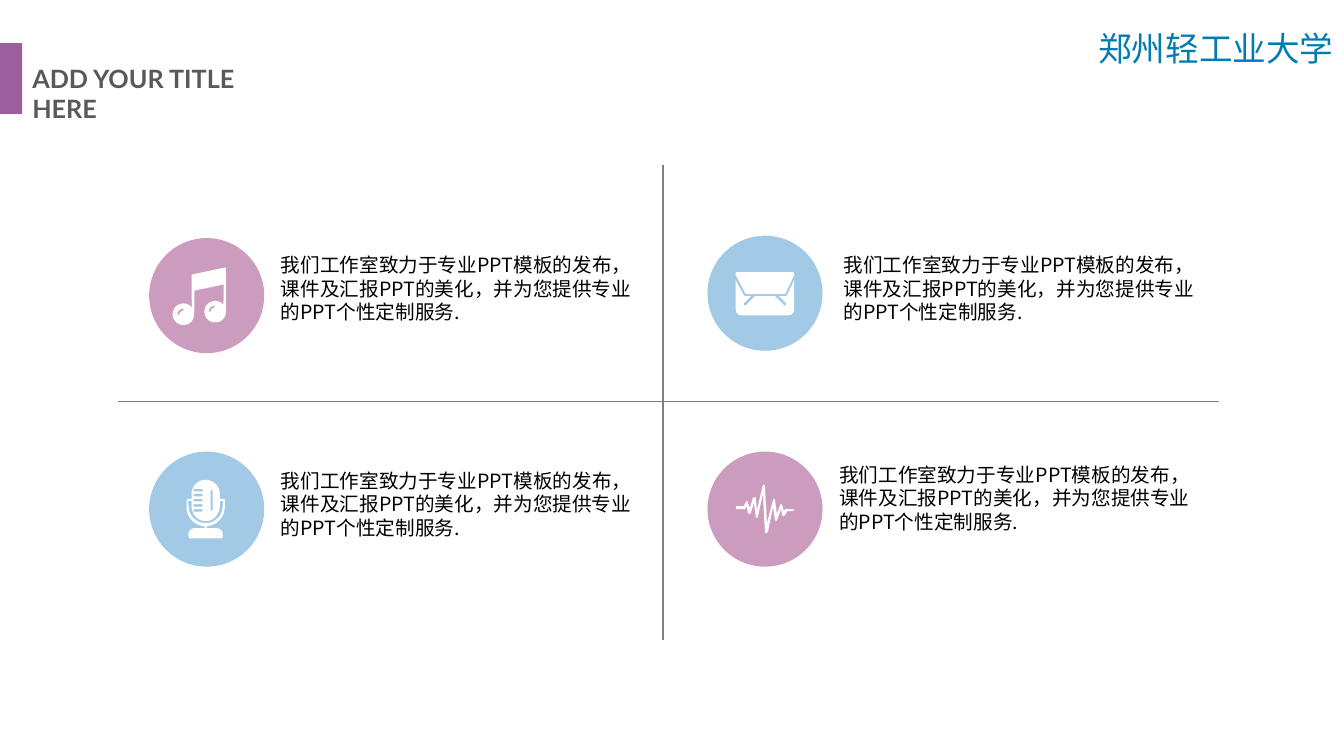
from dataclasses import dataclass
from math import cos, radians, sin

from lxml.etree import SubElement
from pptx import Presentation
from pptx.dml.color import RGBColor
from pptx.enum.shapes import MSO_CONNECTOR, MSO_SHAPE
from pptx.enum.text import MSO_ANCHOR, MSO_AUTO_SIZE, PP_ALIGN
from pptx.oxml.ns import qn
from pptx.util import Cm, Pt

Points = list[tuple[float, float]]

CJK, LATIN = "Noto Sans CJK SC", "Lato"
PINK, BLUE, PURPLE, WHITE = "CC9CBF", "A2CAE7", "9C5E9D", "FFFFFF"
GREY, TITLE_GREY, HEADER_BLUE, BLACK = "808080", "595959", "007CB1", "000000"
BODY = "我们工作室致力于专业PPT模板的发布，课件及汇报PPT的美化，并为您提供专业的PPT个性定制服务."
DISC = 2.9
ICON_UNIT = Cm(2.54) // 100


@dataclass
class Quadrant:
    color: str
    left: float
    top: float
    text_left: float
    text_top: float
    icon: list[list[Points]]  # shapes, each a list of contours


def rgb(color: str) -> RGBColor:
    return RGBColor.from_string(color)


def arc(cx: float, cy: float, rx: float, ry: float, start: int, end: int) -> Points:
    """Points on an ellipse; angles in degrees, clockwise from the right."""
    steps = max(6, abs(end - start) // 10)
    angles = [radians(start + (end - start) * i / steps) for i in range(steps + 1)]
    return [(cx + rx * cos(a), cy + ry * sin(a)) for a in angles]


def glint(cx: float, cy: float) -> Points:
    return arc(cx, cy, 4, 4, 270, 180) + arc(cx, cy, 6, 6, 180, 270)


def music_note() -> list[list[Points]]:
    outline = [(76, 29), (43, 36), (42, 37), *arc(34, 75.5, 10.7, 10.7, -39, -360),
               (45, 52), (74, 46), *arc(65.5, 73, 10.7, 10.7, -40, -360)]
    return [[outline, glint(34, 76), glint(65, 73)]]


def envelope() -> list[list[Points]]:
    body = [(77, 60), (71, 60), (78, 67), (78, 69), (76, 69), (67, 60), (47, 60),
            (38, 69), (36, 69), (36, 67), (43, 60), (37, 60), (36, 59), (28, 44),
            *arc(34, 73, 6, 6, 180, 90), *arc(80, 73, 6, 6, 90, 0), (86, 44), (79, 59)]
    flap = [(85, 36), (29, 36), (28, 37), (28, 39), (38, 58), (77, 58), (86, 39), (86, 37)]
    return [[body], [flap]]


def microphone() -> list[list[Points]]:
    outline = [(75, 48), (74, 47), (70, 47), *arc(56, 42, 14, 14, 0, -180),
               (42, 47), (38, 47), (37, 48), *arc(56, 55, 19, 19, 180, 93),
               (55, 76), *arc(45, 82, 6, 6, 270, 180), (39, 84), (40, 86),
               (72, 86), (73, 84), *arc(67, 82, 6, 6, 0, -90),
               (57, 76), *arc(56, 55, 19, 19, 87, 0)]
    slot = [(61, 39), (62, 37), (63, 39), (63, 58), (62, 59), (61, 58)]
    bars = [[(44, y), (52, y), (54, y + 1.25), (52, y + 2.5), (44, y + 2.5)]
            for y in range(37, 58, 5)]
    cradle = [(39, 49), (42, 49), *arc(56, 54, 14, 15, 180, 0),
              (70, 49), (73, 49), *arc(56, 54, 17, 17, 0, 180)]
    return [[outline, slot, *bars, cradle]]


def sound_wave() -> list[list[Points]]:
    upper = [(85, 57), (77, 57), (76, 59), (74, 53), (73, 52), (72, 53), (69, 62),
             (67, 48), (66, 47), (65, 48), (59, 71), (57, 34), (56, 33), (55, 33),
             (49, 58), (48, 46), (47, 45), (45, 46), (42, 56), (40, 50), (39, 49),
             (38, 50), (36, 54), (29, 54), (28, 55)]
    lower = [(29, 57), (37, 57), (38, 56), (39, 54), (40, 61), (42, 62), (43, 61),
             (46, 51), (48, 65), (49, 66), (50, 65), (55, 42), (57, 80), (58, 81),
             (60, 80), (65, 55), (67, 68), (68, 69), (69, 68), (73, 57), (74, 63),
             (75, 64), (77, 63), (79, 59), (85, 59), (86, 58)]
    return [[upper + lower]]


def paint(shape, color: str) -> None:
    shape.shadow.inherit = False
    shape.fill.solid()
    shape.fill.fore_color.rgb = rgb(color)
    shape.line.fill.background()


def add_icon_part(shapes, contours: list[Points], left: float, top: float) -> None:
    builder = None
    for contour in contours:
        start, *rest = [(round(x * ICON_UNIT), round(y * ICON_UNIT)) for x, y in contour]
        if builder is None:
            builder = shapes.build_freeform(*start)
        else:
            builder.move_to(*start)
        builder.add_line_segments(rest, close=True)
    paint(builder.convert_to_shape(Cm(left), Cm(top)), WHITE)


def add_text(shapes, text: str, box: tuple[float, float, float, float],
             size: int, color: str) -> None:
    tf = shapes.add_textbox(*map(Cm, box)).text_frame
    tf.word_wrap = True
    tf.margin_right = Cm(0.2)
    p = tf.paragraphs[0]
    p.text = text
    p.line_spacing = Pt(size * 1.2)
    font = p.runs[0].font
    font.name, font.size, font.color.rgb = CJK, Pt(size), rgb(color)
    SubElement(p.runs[0]._r.get_or_add_rPr(), qn("a:ea"), typeface=CJK)


def add_rule(shapes, x1: float, y1: float, x2: float, y2: float) -> None:
    line = shapes.add_connector(MSO_CONNECTOR.STRAIGHT, Cm(x1), Cm(y1), Cm(x2), Cm(y2))
    line.line.color.rgb, line.line.width = rgb(GREY), Pt(1)
    SubElement(line._element.spPr, qn("a:effectLst"))


def add_quadrant(shapes, q: Quadrant) -> None:
    members = shapes.add_group_shape().shapes
    disc = members.add_shape(MSO_SHAPE.OVAL, Cm(q.left), Cm(q.top), Cm(DISC), Cm(DISC))
    paint(disc, q.color)
    for contours in q.icon:
        add_icon_part(members, contours, q.left, q.top)
    add_text(members, BODY, (q.text_left, q.text_top, 9.32, 2.29), 14, BLACK)


def format_title(title) -> None:
    title.left, title.top, title.width, title.height = map(Cm, (0.56, 1.47, 6.9, 1.8))
    tf = title.text_frame
    tf.text = "ADD YOUR TITLE HERE"
    tf.word_wrap, tf.auto_size = True, MSO_AUTO_SIZE.NONE
    tf.vertical_anchor = MSO_ANCHOR.TOP
    p = tf.paragraphs[0]
    p.alignment, p.line_spacing = PP_ALIGN.LEFT, 1.0
    font = p.runs[0].font
    font.name, font.size, font.bold = LATIN, Pt(18), True
    font.color.rgb = rgb(TITLE_GREY)


def main() -> None:
    prs = Presentation()
    prs.slide_width, prs.slide_height = Cm(33.87), Cm(19.05)
    s = prs.slides.add_slide(prs.slide_layouts[5])
    shapes = s.shapes
    format_title(shapes.title)
    add_text(shapes, "郑州轻工业大学", (27.43, 0.58, 6.44, 1.14), 24, HEADER_BLUE)
    paint(shapes.add_shape(MSO_SHAPE.RECTANGLE, 0, Cm(1.09), Cm(0.56), Cm(1.78)), PURPLE)
    add_rule(shapes, 2.97, 10.11, 30.73, 10.11)
    add_rule(shapes, 16.71, 4.17, 16.71, 16.13)
    for q in (
        Quadrant(PINK, 3.76, 6, 6.83, 6.25, music_note()),
        Quadrant(BLUE, 17.83, 5.94, 21.01, 6.25, envelope()),
        Quadrant(BLUE, 3.76, 11.38, 6.83, 11.68, microphone()),
        Quadrant(PINK, 17.83, 11.38, 20.9, 11.53, sound_wave()),
    ):
        add_quadrant(shapes, q)
    prs.save("out.pptx")


if __name__ == "__main__":
    main()
